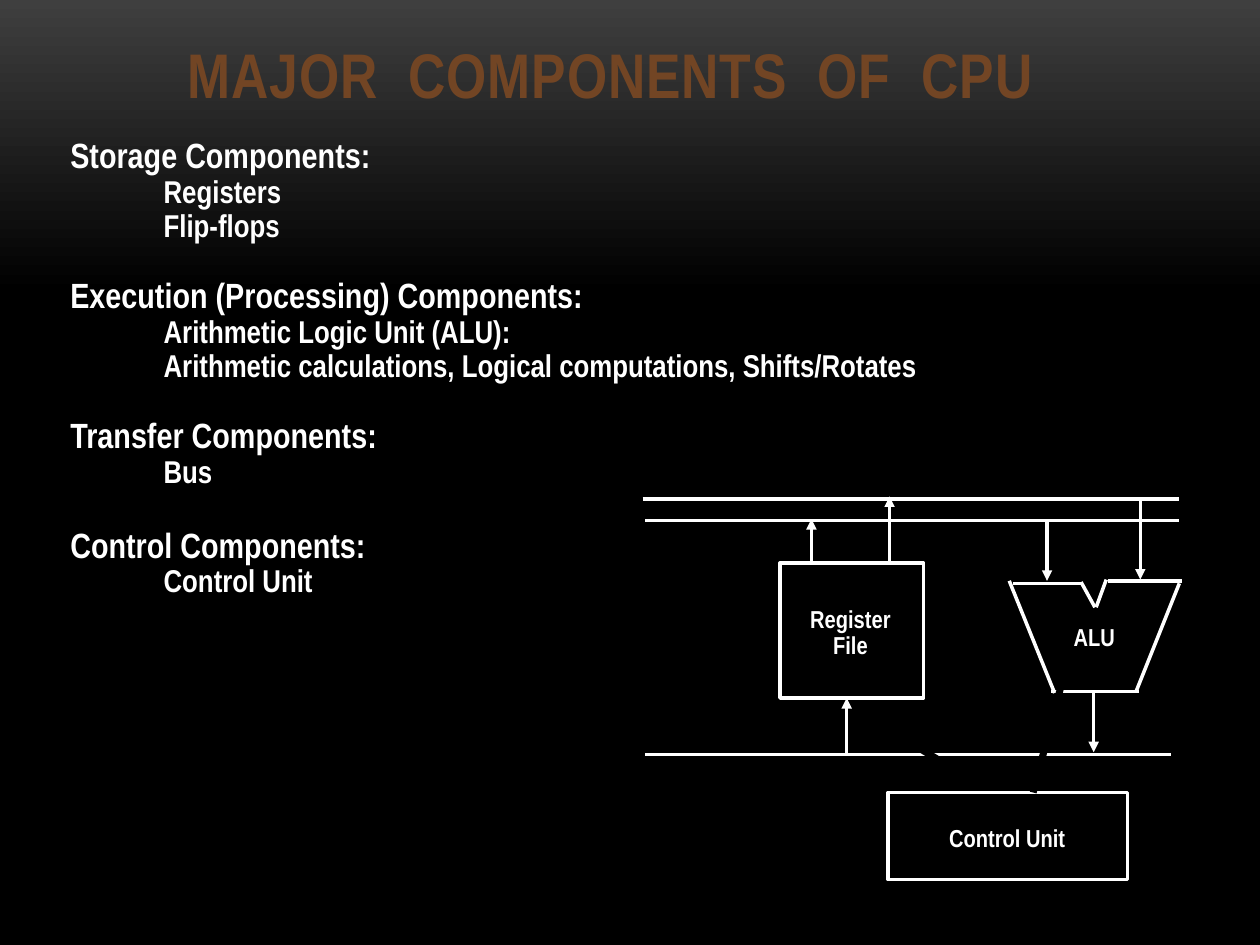
"""Build the slide on the major components of a CPU."""
from typing import NamedTuple

from lxml.etree import SubElement
from pptx import Presentation
from pptx.dml.color import RGBColor
from pptx.enum.shapes import MSO_CONNECTOR as Connector, MSO_SHAPE as Preset
from pptx.enum.text import MSO_ANCHOR as Anchor, MSO_AUTO_SIZE as AutoSize, PP_ALIGN as Align
from pptx.oxml.ns import qn
from pptx.slide import Slide
from pptx.util import Inches, Pt

WHITE, BLACK, BROWN, GREY = "FFFFFF", "000000", "724524", "3F3F3F"
BODY_INDENT = 0.74


class Box(NamedTuple):
    left: float
    top: float
    width: float
    height: float


class Line(NamedTuple):
    x1: float
    y1: float
    x2: float
    y2: float
    arrow: bool = False
    color: str = WHITE
    weight: float = 2


class Section(NamedTuple):
    heading: str
    items: tuple[str, ...]
    gap: float


class Label(NamedTuple):
    box: Box
    lines: tuple[str, ...]


SECTIONS = (
    Section("Storage Components:", ("Registers", "Flip-flops"), 0),
    Section(
        "Execution (Processing) Components:",
        ("Arithmetic Logic Unit (ALU):",
         "Arithmetic calculations, Logical computations, Shifts/Rotates"),
        19.5,
    ),
    Section("Transfer Components:", ("Bus",), 19.5),
    Section("Control Components:", ("Control Unit",), 21.5),
)
REGISTER_FILE = Box(6.19, 4.47, 1.14, 1.07)
CONTROL_UNIT = Box(7.05, 6.29, 1.9, 0.69)
LABELS = (
    Label(Box(6.33, 4.77, 0.84, 0.52), ("Register", "File")),
    Label(Box(8.42, 4.91, 0.53, 0.31), ("ALU",)),
    Label(Box(7.43, 6.51, 1.13, 0.31), ("Control Unit",)),
)
ALU_OUTLINE = (
    Line(8.04, 4.63, 8.59, 4.63),
    Line(8.58, 4.62, 8.69, 4.82),
    Line(8.7, 4.82, 8.78, 4.6),
    Line(8.79, 4.61, 9.38, 4.61),
    Line(9.36, 4.63, 9.02, 5.48),
    Line(9.04, 5.49, 8.34, 5.49),
    Line(8.37, 5.5, 8.01, 4.61),
)
DATA_ARROWS = (
    Line(9.05, 3.98, 9.05, 4.6, True),
    Line(8.31, 4.13, 8.31, 4.61, True),
    Line(8.68, 5.49, 8.68, 5.97, True),
    Line(6.72, 5.99, 6.72, 5.54, True),
    Line(7.06, 4.47, 7.06, 3.94, True),
    Line(6.44, 4.48, 6.44, 4.12, True),
)
CONTROL_ARROWS = (
    Line(7.66, 6.16, 6.84, 5.66, True, BLACK, 4),
    Line(8.2, 6.29, 8.48, 5.22, True, BLACK, 4),
)
BUSES = (
    Line(5.12, 5.99, 9.29, 5.99),
    Line(5.12, 4.13, 9.36, 4.13),
    Line(5.1, 3.96, 9.36, 3.96),
)


def rgb(color: str) -> RGBColor:
    return RGBColor.from_string(color)


def apply(target, values: dict) -> None:
    for name, value in values.items():
        setattr(target, name, value)


def paint_background(slide: Slide) -> None:
    fill = slide.background.fill
    fill.gradient()
    fill.gradient_angle = 270
    for stop, position, color in zip(fill.gradient_stops, (0, 0.31), (GREY, BLACK)):
        stop.position = position
        stop.color.rgb = rgb(color)


def add_text_frame(slide: Slide, box: Box, **values):
    frame = slide.shapes.add_textbox(*map(Inches, box)).text_frame
    apply(frame, values)
    return frame


def add_paragraph(frame, text: str, size: float, color: str = WHITE, **values):
    paragraph = frame.add_paragraph() if frame.paragraphs[0].runs else frame.paragraphs[0]
    apply(paragraph, values)
    run = paragraph.add_run()
    run.text = text
    apply(run.font, {"name": "Arial Narrow", "size": Pt(size), "bold": True})
    run.font.color.rgb = rgb(color)
    return paragraph, run


def add_title(slide: Slide) -> None:
    side, edge = Inches(0.07), Inches(0.03)
    frame = add_text_frame(
        slide, Box(1.42, 0.2, 7.72, 0.71), word_wrap=True, vertical_anchor=Anchor.BOTTOM,
        margin_left=side, margin_right=side, margin_top=edge, margin_bottom=edge,
    )
    _, run = add_paragraph(frame, "MAJOR  COMPONENTS  OF  CPU", 36, BROWN)
    run._r.get_or_add_rPr().set("spc", "50")


def add_body(slide: Slide) -> None:
    frame = add_text_frame(slide, Box(0.46, 1.05, 8.99, 3.77), word_wrap=True)
    for section in SECTIONS:
        add_paragraph(frame, section.heading, 20, line_spacing=0.9, space_before=Pt(section.gap))
        for item in section.items:
            paragraph, _ = add_paragraph(frame, item, 18, line_spacing=0.9)
            paragraph._p.get_or_add_pPr().set("marL", str(Inches(BODY_INDENT)))


def add_label(slide: Slide, label: Label) -> None:
    frame = add_text_frame(
        slide, label.box, word_wrap=False, auto_size=AutoSize.SHAPE_TO_FIT_TEXT)
    for text in label.lines:
        add_paragraph(frame, text, 14, alignment=Align.CENTER, line_spacing=0.9)


def add_block(slide: Slide, box: Box) -> None:
    shape = slide.shapes.add_shape(Preset.RECTANGLE, *map(Inches, box))
    shape.shadow.inherit = False
    shape.fill.background()
    shape.line.color.rgb = rgb(WHITE)
    shape.line.width = Pt(2)


def add_line(slide: Slide, line: Line) -> None:
    connector = slide.shapes.add_connector(Connector.STRAIGHT, *map(Inches, line[:4]))
    connector.line.color.rgb = rgb(line.color)
    connector.line.width = Pt(line.weight)
    properties = connector._element.spPr
    if line.arrow:
        SubElement(properties.find(qn("a:ln")), qn("a:tailEnd"), type="triangle")
    SubElement(properties, qn("a:effectLst"))


def main() -> None:
    presentation = Presentation()
    apply(presentation, {"slide_width": Inches(10), "slide_height": Inches(7.5)})
    slide = presentation.slides.add_slide(presentation.slide_layouts[6])
    paint_background(slide)
    add_title(slide)
    add_body(slide)
    for block in (REGISTER_FILE, CONTROL_UNIT):
        add_block(slide, block)
    for line in ALU_OUTLINE + DATA_ARROWS + BUSES + CONTROL_ARROWS:
        add_line(slide, line)
    for label in LABELS:
        add_label(slide, label)
    presentation.save("out.pptx")


if __name__ == "__main__":
    main()
